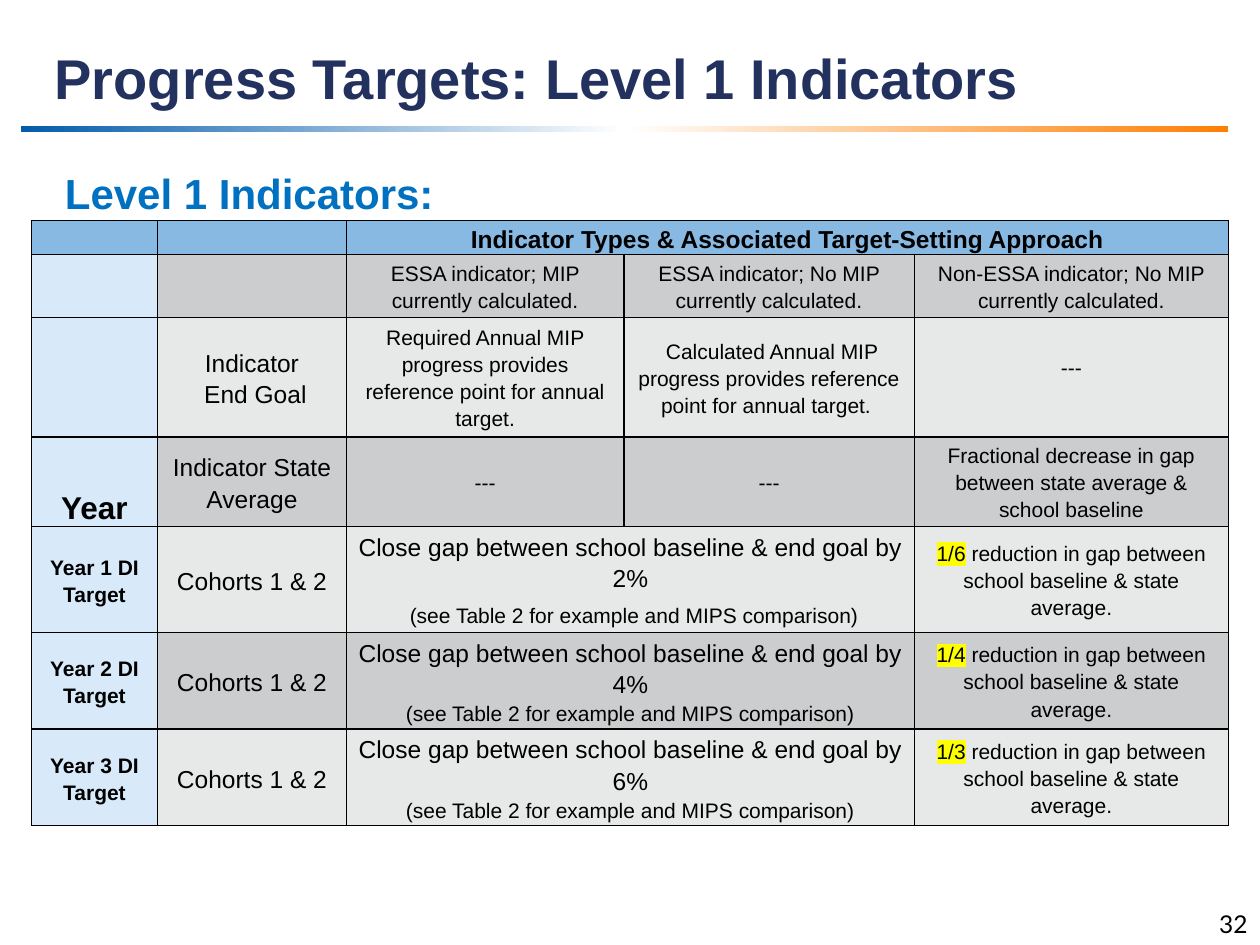
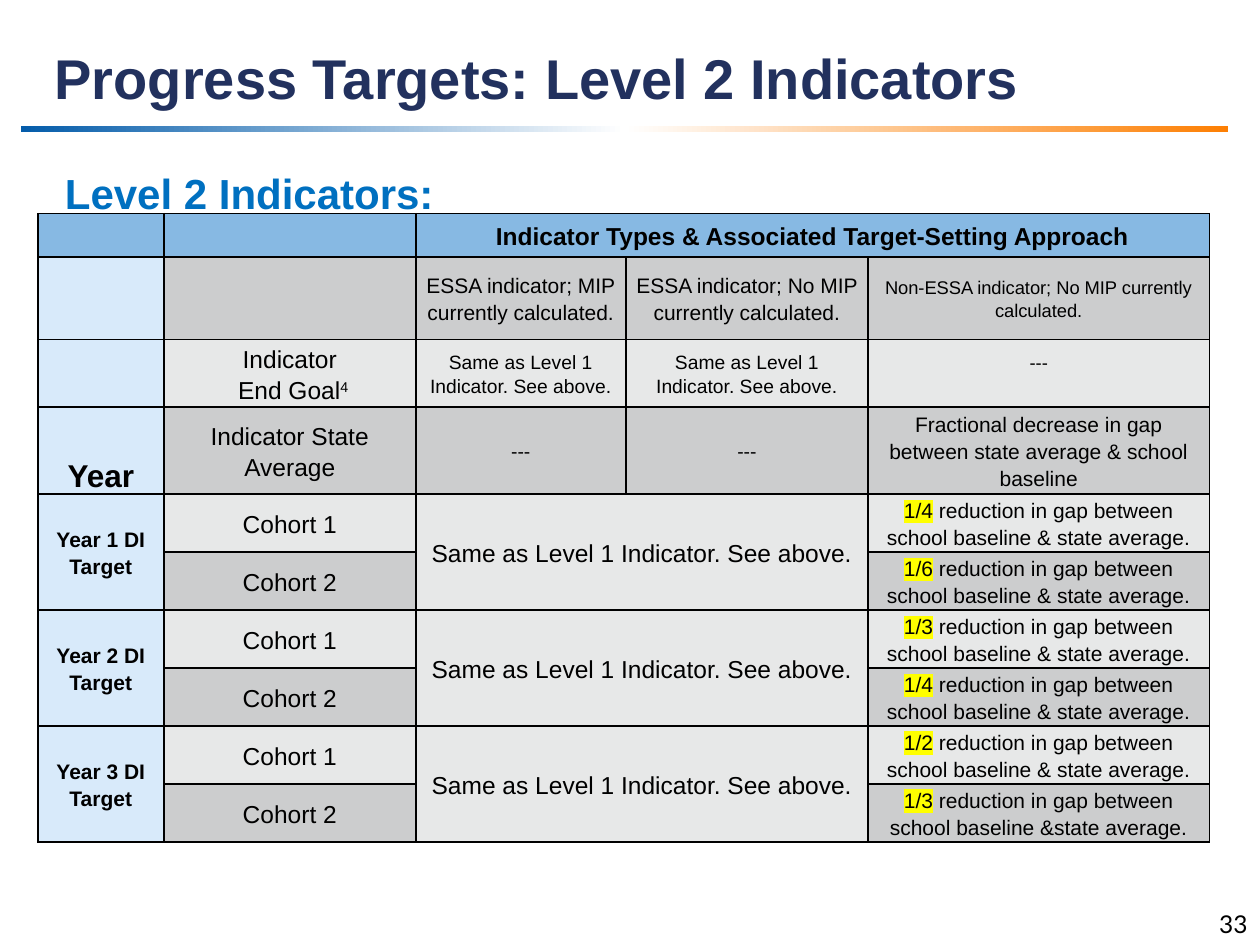
from copy import deepcopy

from pptx import Presentation
from pptx.dml.color import RGBColor
from pptx.enum.shapes import MSO_SHAPE
from pptx.enum.text import MSO_ANCHOR, PP_ALIGN
from pptx.oxml.ns import qn
from pptx.oxml.xmlchemy import OxmlElement
from pptx.util import Pt

RECTANGLE = MSO_SHAPE.RECTANGLE
TOP, MIDDLE, BOTTOM = MSO_ANCHOR.TOP, MSO_ANCHOR.MIDDLE, MSO_ANCHOR.BOTTOM
LEFT, CENTER, RIGHT = PP_ALIGN.LEFT, PP_ALIGN.CENTER, PP_ALIGN.RIGHT

BLACK = RGBColor(0x00, 0x00, 0x00)
NAVY = RGBColor(0x22, 0x31, 0x5E)
HEADING_BLUE = RGBColor(0x00, 0x70, 0xC0)
HEADER_FILL = RGBColor(0x87, 0xB9, 0xE3)
YEAR_FILL = RGBColor(0xD8, 0xEA, 0xFA)
DARK_ROW = RGBColor(0xCC, 0xCD, 0xCE)
LIGHT_ROW = RGBColor(0xE7, 0xE8, 0xE8)
YELLOW = RGBColor(0xFF, 0xFF, 0x00)
BAND_STOPS = (
    (0, RGBColor(0x04, 0x5C, 0xAA)),
    (0.5, RGBColor(0xFF, 0xFF, 0xFF)),
    (1, RGBColor(0xFD, 0x7F, 0x03)),
)

DASHES = "---"
SAME_AS_LEVEL_1 = "Same as Level 1 Indicator. See above."
HIGHLIGHT, SUPERSCRIPT = "highlight", "superscript"


def solid_fill(tag, color):
    """Return a fill-like XML element that holds one RGB colour."""
    element = OxmlElement(tag)
    srgb = OxmlElement("a:srgbClr")
    srgb.set("val", str(color))
    element.append(srgb)
    return element


def add_borders(cell):
    properties = cell._tc.get_or_add_tcPr()
    for side in ("a:lnL", "a:lnR", "a:lnT", "a:lnB"):
        line = OxmlElement(side)
        line.set("w", str(Pt(1)))
        line.append(solid_fill("a:solidFill", BLACK))
        properties.append(line)


def shrink_empty_line(cell):
    """Keep an empty cell from stretching its row."""
    end = OxmlElement("a:endParaRPr")
    end.set("sz", "800")
    cell.text_frame.paragraphs[0]._p.append(end)


class Deck:
    def __init__(self):
        self.presentation = Presentation()
        self.presentation.slide_width = Pt(720)
        self.presentation.slide_height = Pt(540)
        self.slide = None
        self.table = None

    def new_slide(self, title, heading, number):
        layout = self.presentation.slide_layouts[5]
        self.slide = self.presentation.slides.add_slide(layout)
        self.title(title)
        self.band()
        self.text_box(heading, 30, 92, 619, 36, 24, HEADING_BLUE, bold=True)
        self.text_box(number, 552, 516, 168, 24, 14, BLACK, font="Lato", align=RIGHT)

    def run(self, paragraph, text, size, color=BLACK, bold=False, font="Arial", mark=None):
        run = paragraph.add_run()
        run.text = text
        run.font.size = Pt(size)
        run.font.bold = bold
        run.font.color.rgb = color
        properties = run._r.get_or_add_rPr()
        if mark == HIGHLIGHT:
            properties.append(solid_fill("a:highlight", YELLOW))
        elif mark == SUPERSCRIPT:
            properties.set("baseline", "30000")
        run.font.name = font

    def title(self, text):
        title = self.slide.shapes.title
        title.left, title.top, title.width, title.height = Pt(24), Pt(0), Pt(678), Pt(67)
        frame = title.text_frame
        frame.vertical_anchor = BOTTOM
        paragraph = frame.paragraphs[0]
        paragraph.alignment = LEFT
        paragraph.line_spacing = Pt(36)
        self.run(paragraph, text, 32, NAVY, bold=True)

    def band(self):
        band = self.slide.shapes.add_shape(RECTANGLE, Pt(12), Pt(72), Pt(690), Pt(3.6))
        band.shadow.inherit = False
        band.line.fill.background()
        band.fill.gradient()
        band.fill.gradient_angle = 0
        stop_list = band._element.spPr.find(".//" + qn("a:gsLst"))
        stop_list.append(deepcopy(stop_list[0]))
        for stop, (position, color) in zip(band.fill.gradient_stops, BAND_STOPS):
            stop.position = position
            stop.color.rgb = color

    def text_box(self, text, left, top, width, height, size, color,
                 bold=False, font="Arial", align=LEFT):
        box = self.slide.shapes.add_textbox(Pt(left), Pt(top), Pt(width), Pt(height))
        frame = box.text_frame
        frame.word_wrap = True
        frame.vertical_anchor = TOP
        paragraph = frame.paragraphs[0]
        paragraph.alignment = align
        self.run(paragraph, text, size, color, bold, font)

    def grid(self, left, top, widths, heights):
        """Start a bordered table with year column and alternating rows."""
        frame = self.slide.shapes.add_table(
            len(heights), len(widths), Pt(left), Pt(top), Pt(sum(widths)), Pt(sum(heights)))
        self.table = frame.table
        self.table.first_row = False
        self.table.horz_banding = False
        for column, width in zip(self.table.columns, widths):
            column.width = Pt(width)
        for row_index, height in enumerate(heights):
            self.table.rows[row_index].height = Pt(height)
            row_fill = DARK_ROW if row_index % 2 else LIGHT_ROW
            for column_index in range(len(widths)):
                cell = self.table.cell(row_index, column_index)
                cell.margin_left = cell.margin_right = Pt(5)
                cell.margin_top = cell.margin_bottom = Pt(0)
                add_borders(cell)
                shrink_empty_line(cell)
                cell.fill.solid()
                if row_index == 0:
                    cell.fill.fore_color.rgb = HEADER_FILL
                else:
                    cell.fill.fore_color.rgb = row_fill if column_index else YEAR_FILL

    def fill_cell(self, row, column, *lines, size=12, bold=False, anchor=MIDDLE,
                  span=(1, 1), bottom=0):
        """Fill a cell; a line is a string or a list of (text, size, mark) runs."""
        cell = self.table.cell(row, column)
        if span != (1, 1):
            cell.merge(self.table.cell(row + span[0] - 1, column + span[1] - 1))
        cell.vertical_anchor = anchor
        cell.margin_bottom = Pt(bottom)
        frame = cell.text_frame
        for index, line in enumerate(lines):
            paragraph = frame.add_paragraph() if index else frame.paragraphs[0]
            paragraph.alignment = CENTER
            paragraph.line_spacing = 1.15
            runs = [(line, size, None)] if isinstance(line, str) else line
            for text, run_size, mark in runs:
                self.run(paragraph, text, run_size, bold=bold, mark=mark)

    def indicator_heads(self, non_essa_size, dash_size):
        """Fill the header rows and row labels that both levels share."""
        self.fill_cell(0, 2, "Indicator Types & Associated Target-Setting Approach",
                       size=14, bold=True, span=(1, 3))
        kinds = ("ESSA indicator; MIP", "ESSA indicator; No MIP", "Non-ESSA indicator; No MIP")
        for column, (kind, size) in enumerate(zip(kinds, (12, 12, non_essa_size)), start=2):
            self.fill_cell(1, column, f"{kind} currently calculated.", size=size)
        self.fill_cell(2, 4, DASHES, size=non_essa_size, bottom=13)
        self.fill_cell(3, 0, "Year", size=18, bold=True, anchor=BOTTOM)
        self.fill_cell(3, 1, "Indicator State Average", size=14)
        for column in (2, 3):
            self.fill_cell(3, column, DASHES, size=dash_size)
        self.fill_cell(3, 4, "Fractional decrease in gap between state average & school baseline")

    def year_label(self, row, year, rows=1):
        self.fill_cell(row, 0, f"Year {year} DI Target", bold=True, span=(rows, 1))

    def reduction(self, row, fraction, joiner="& "):
        rest = f" reduction in gap between school baseline {joiner}state average."
        self.fill_cell(row, 4, [(fraction, 12, HIGHLIGHT), (rest, 12, None)])


def level_1(deck):
    deck.new_slide("Progress Targets: Level 1 Indicators", "Level 1 Indicators:", "32")
    deck.grid(18, 126, (72, 108, 158.5, 166, 179.5), (19.4, 36, 68.4, 51, 56.5, 51.5, 51.5))
    deck.indicator_heads(non_essa_size=12, dash_size=12)
    deck.fill_cell(2, 1, "Indicator", " End Goal", size=14)
    deck.fill_cell(2, 2, "Required Annual MIP progress provides reference point for annual target.")
    deck.fill_cell(
        2, 3, " Calculated Annual MIP progress provides reference point for annual target. ")
    for year, fraction in enumerate(("1/6", "1/4", "1/3"), start=1):
        row = year + 3
        deck.year_label(row, year)
        deck.fill_cell(row, 1, "Cohorts 1 & 2", size=14)
        example = [("(see Table 2 for example and MIPS comparison)", 12, None)]
        if year == 1:
            example.insert(0, (" ", 16, None))
        deck.fill_cell(row, 2, f"Close gap between school baseline & end goal by {2 * year}%",
                       example, size=14, span=(1, 2))
        deck.reduction(row, fraction)


def level_2(deck):
    deck.new_slide("Progress Targets: Level 2 Indicators", "Level 2 Indicators:", "33")
    deck.grid(21.6, 122, (72, 144, 120, 138.5, 195), (25, 47, 36.5, 46) + (32,) * 6)
    deck.indicator_heads(non_essa_size=10.5, dash_size=11)
    deck.fill_cell(2, 1, "Indicator", [(" End Goal", 14, None), ("4", 14, SUPERSCRIPT)], size=14)
    for column in (2, 3):
        deck.fill_cell(2, column, SAME_AS_LEVEL_1, size=11)
    yearly_fractions = (("1/4", "1/6"), ("1/3", "1/4"), ("1/2", "1/3"))
    for year, fractions in enumerate(yearly_fractions, start=1):
        first_row = 2 * year + 2
        deck.year_label(first_row, year, rows=2)
        deck.fill_cell(first_row, 2, SAME_AS_LEVEL_1, size=14, span=(2, 2))
        for cohort, fraction in enumerate(fractions, start=1):
            row = first_row + cohort - 1
            deck.fill_cell(row, 1, f"Cohort {cohort}", size=14)
            deck.reduction(row, fraction, "&" if (year, cohort) == (3, 2) else "& ")


def main():
    deck = Deck()
    level_1(deck)
    level_2(deck)
    deck.presentation.save("out.pptx")


if __name__ == "__main__":
    main()
